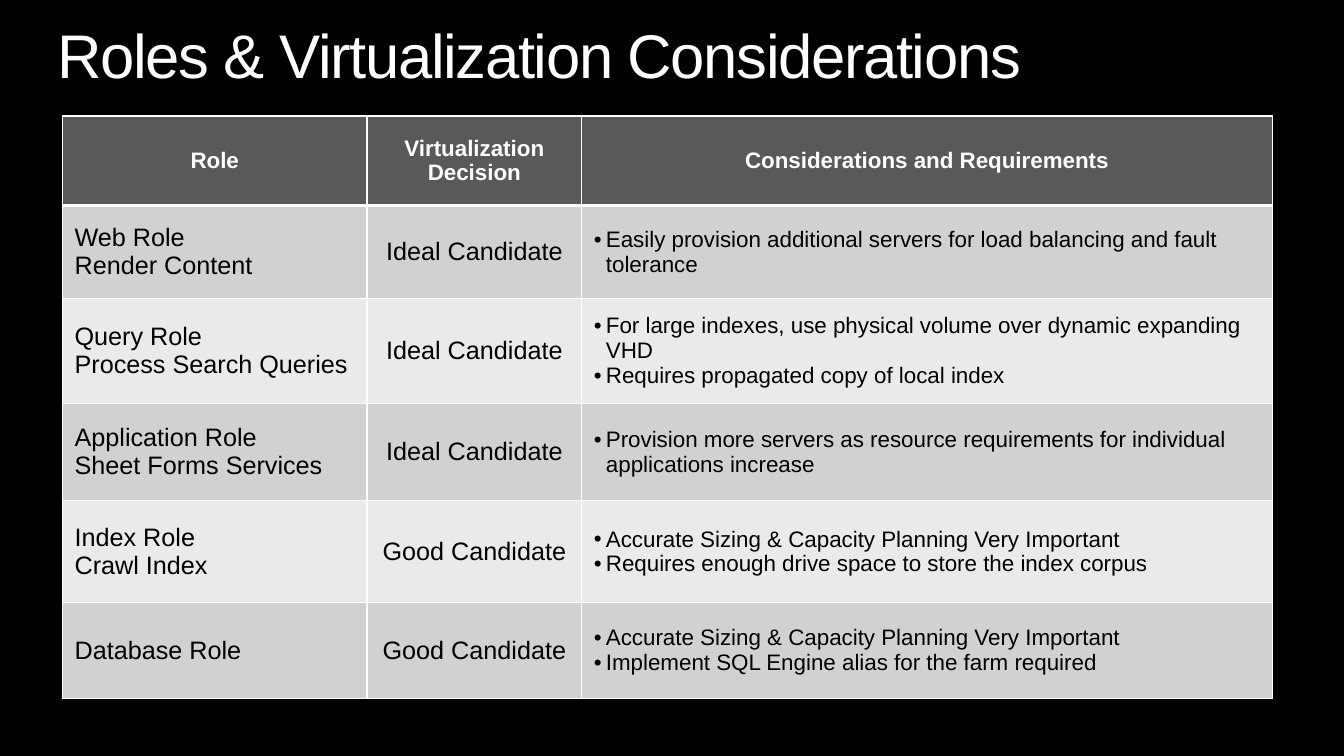
from lxml import etree
from pptx import Presentation
from pptx.dml.color import RGBColor
from pptx.enum.text import MSO_ANCHOR, MSO_AUTO_SIZE, PP_ALIGN
from pptx.oxml import parse_xml
from pptx.oxml.ns import nsdecls, qn
from pptx.util import Inches, Pt

BLACK = RGBColor(0x00, 0x00, 0x00)
WHITE = RGBColor(0xFF, 0xFF, 0xFF)
HEADER = RGBColor(0x59, 0x58, 0x5A)
BANDS = [RGBColor(0xD1, 0xD1, 0xD2), RGBColor(0xEA, 0xEA, 0xEA)]


def write(tf, lines, size=16, color=BLACK, bold=False, align=PP_ALIGN.LEFT,
          bullet=False, line_spacing=None, spacing=None):
    for i, line in enumerate(lines):
        p = tf.paragraphs[0] if i == 0 else tf.add_paragraph()
        p.alignment = align
        if line_spacing:
            p.line_spacing = line_spacing
        if bullet:
            pPr = p._p.get_or_add_pPr()
            pPr.set("marL", str(Inches(0.12)))
            pPr.set("indent", str(-Inches(0.12)))
            etree.SubElement(pPr, qn("a:buFont")).set("typeface", "Arial")
            etree.SubElement(pPr, qn("a:buChar")).set("char", "•")
        r = p.add_run()
        r.text = line
        r.font.name = "Arial"
        r.font.size = Pt(size)
        r.font.bold = bold
        r.font.color.rgb = color
        if spacing:
            r._r.get_or_add_rPr().set("spc", str(spacing))


def add_borders(cell, top, bottom):
    tcPr = cell._tc.get_or_add_tcPr()
    for side, width in (("L", 1), ("R", 1), ("T", top), ("B", bottom)):
        tcPr.append(parse_xml(
            f'<a:ln{side} {nsdecls("a")} w="{Pt(width)}"><a:solidFill>'
            f'<a:srgbClr val="{WHITE}"/></a:solidFill></a:ln{side}>'))


prs = Presentation()
prs.slide_width = Inches(13.33)
prs.slide_height = Inches(7.5)
s = prs.slides.add_slide(prs.slide_layouts[5])
s.background.fill.solid()
s.background.fill.fore_color.rgb = BLACK

title = s.shapes.title
title.left, title.top = Inches(0.57), Inches(0.25)
title.width, title.height = Inches(12.19), Inches(0.67)
tf = title.text_frame
tf.margin_left = tf.margin_right = tf.margin_top = tf.margin_bottom = 0
tf.vertical_anchor = MSO_ANCHOR.TOP
tf.word_wrap = True
tf.auto_size = MSO_AUTO_SIZE.SHAPE_TO_FIT_TEXT
write(tf, ["Roles & Virtualization Considerations"], size=44, color=WHITE,
      line_spacing=0.9, spacing=-100)

rows = [
    (["Role"], ["Virtualization", "Decision"], ["Considerations and Requirements"]),
    (["Web Role", "Render Content"], ["Ideal Candidate"],
     ["Easily provision additional servers for load balancing and fault tolerance"]),
    (["Query Role", "Process Search Queries"], ["Ideal Candidate"],
     ["For large indexes, use physical volume over dynamic expanding VHD",
      "Requires propagated copy of local index"]),
    (["Application Role", "Sheet Forms Services"], ["Ideal Candidate"],
     ["Provision more servers as resource requirements for individual applications increase"]),
    (["Index Role", "Crawl Index"], ["Good Candidate"],
     ["Accurate Sizing & Capacity Planning Very Important",
      "Requires enough drive space to store the index corpus"]),
    (["Database Role"], ["Good Candidate"],
     ["Accurate Sizing & Capacity Planning Very Important",
      "Implement SQL Engine alias for the farm required"]),
]
col_widths = [3.02, 2.13, 6.85]
row_heights = [0.89, 0.92, 1.04, 0.97, 1.01, 0.95]
body_formats = [
    dict(size=18),
    dict(size=18, align=PP_ALIGN.CENTER),
    dict(size=16, bullet=True),
]
header_format = dict(color=WHITE, bold=True, align=PP_ALIGN.CENTER)

table = s.shapes.add_table(len(rows), len(col_widths), Inches(0.62), Inches(1.15),
                           Inches(sum(col_widths)), Inches(sum(row_heights))).table
for col, width in zip(table.columns, col_widths):
    col.width = Inches(width)
for row, height in zip(table.rows, row_heights):
    row.height = Inches(height)

for i, row in enumerate(rows):
    for j, lines in enumerate(row):
        cell = table.cell(i, j)
        cell.vertical_anchor = MSO_ANCHOR.MIDDLE
        cell.margin_left = cell.margin_right = Inches(0.12)
        cell.margin_top = cell.margin_bottom = Inches(0.05)
        add_borders(cell, top=3 if i == 1 else 1, bottom=3 if i == 0 else 1)
        cell.fill.solid()
        cell.fill.fore_color.rgb = HEADER if i == 0 else BANDS[(i - 1) % 2]
        write(cell.text_frame, lines, **(header_format if i == 0 else body_formats[j]))

prs.save("out.pptx")
